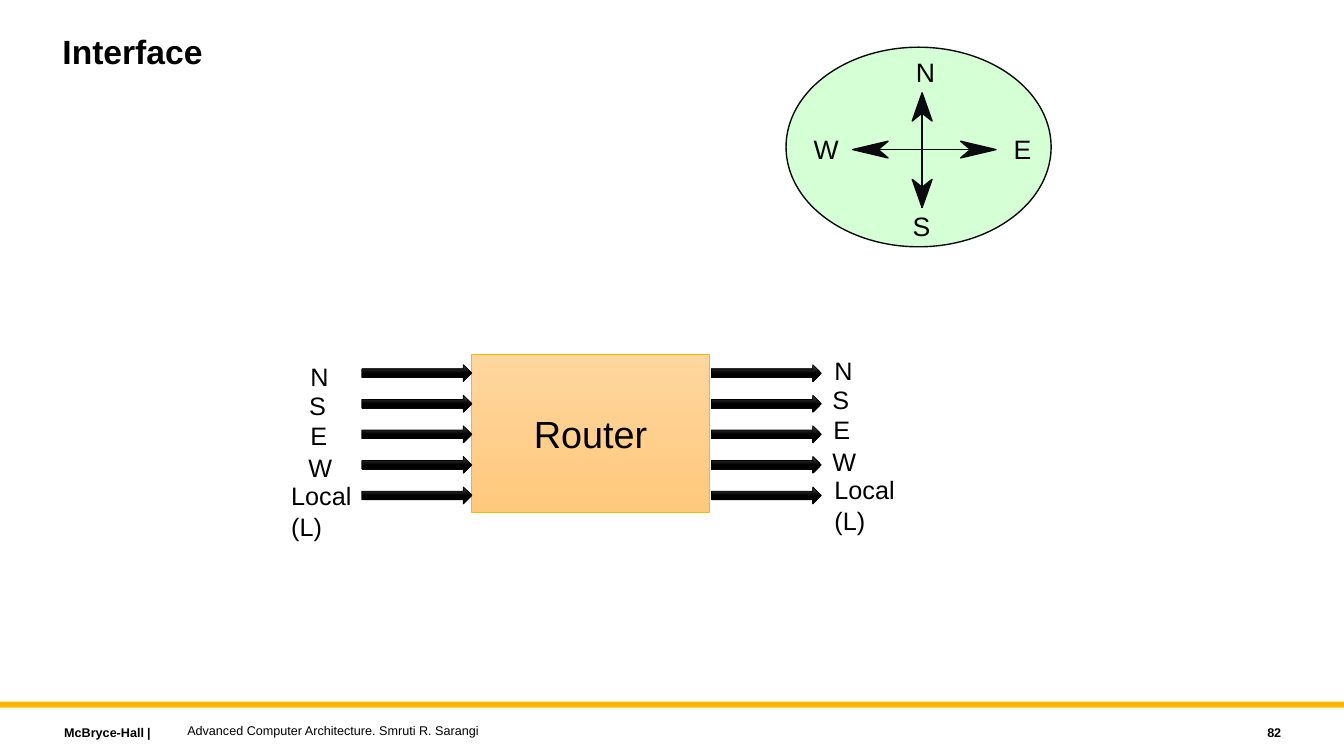
from dataclasses import dataclass

from lxml import etree
from pptx import Presentation
from pptx.dml.color import RGBColor
from pptx.enum.shapes import MSO_CONNECTOR, MSO_SHAPE
from pptx.enum.text import MSO_ANCHOR, MSO_AUTO_SIZE, PP_ALIGN
from pptx.oxml.ns import qn
from pptx.util import Cm, Pt

LEFT, CENTER, RIGHT = PP_ALIGN.LEFT, PP_ALIGN.CENTER, PP_ALIGN.RIGHT
TOP, MIDDLE = MSO_ANCHOR.TOP, MSO_ANCHOR.MIDDLE
RECTANGLE, OVAL, ARROW = MSO_SHAPE.RECTANGLE, MSO_SHAPE.OVAL, MSO_SHAPE.RIGHT_ARROW
STRAIGHT = MSO_CONNECTOR.STRAIGHT


@dataclass(frozen=True)
class Theme:
    font: str = "Arial"
    black: RGBColor = RGBColor(0, 0, 0)
    ink: RGBColor = RGBColor(0x0A, 0x0A, 0x0F)
    gold: RGBColor = RGBColor(0xFF, 0xB6, 0x00)
    mint: RGBColor = RGBColor(0xD5, 0xFF, 0xD5)
    peach: RGBColor = RGBColor(0xFF, 0xD6, 0x9E)
    apricot: RGBColor = RGBColor(0xFF, 0xC9, 0x7C)
    grey: RGBColor = RGBColor(0x4B, 0x4B, 0x4B)
    title: int = 24
    router: int = 27
    compass: int = 19
    port: int = 18
    footer: int = 9


THEME = Theme()


def write(frame, lines, size, bold=False, align=LEFT, anchor=TOP, wrap=True):
    frame.word_wrap = wrap
    frame.auto_size = MSO_AUTO_SIZE.NONE if wrap else MSO_AUTO_SIZE.SHAPE_TO_FIT_TEXT
    frame.vertical_anchor = anchor
    for index, line in enumerate(lines):
        paragraph = frame.paragraphs[0] if index == 0 else frame.add_paragraph()
        paragraph.alignment = align
        run = paragraph.add_run()
        run.text = line
        run.font.name = THEME.font
        run.font.size = Pt(size)
        run.font.bold = bold
        run.font.color.rgb = THEME.black


def paint(shape, colors, line=None, width=1, last_stop=1.0):
    shape.shadow.inherit = False
    if len(colors) == 1:
        shape.fill.solid()
        shape.fill.fore_color.rgb = colors[0]
    else:
        shape.fill.gradient()
        shape.fill.gradient_angle = 270
        for stop, color in zip(shape.fill.gradient_stops, colors):
            stop.color.rgb = color
        shape.fill.gradient_stops[1].position = last_stop
    if line is None:
        shape.line.fill.background()
    else:
        shape.line.color.rgb = line
        shape.line.width = Pt(width)


deck = Presentation()
deck.slide_width, deck.slide_height = Cm(33.87), Cm(19.05)
slide = deck.slides.add_slide(deck.slide_layouts[5])
shapes = slide.shapes

# Footer
footer_bar = shapes.add_shape(RECTANGLE, Cm(0), Cm(17.68), Cm(33.87), Cm(0.15))
paint(footer_bar, [THEME.gold])
publisher = shapes.add_textbox(Cm(1.37), Cm(18.14), Cm(5.77), Cm(0.64)).text_frame
tabs = etree.SubElement(publisher.paragraphs[0]._p.get_or_add_pPr(), qn("a:tabLst"))
etree.SubElement(tabs, qn("a:tab"), pos=str(Cm(2.09)), algn="l")
write(publisher, ["McBryce-Hall\t|"], THEME.footer, bold=True)
book = shapes.add_textbox(Cm(4.47), Cm(18.08), Cm(20.32), Cm(0.64)).text_frame
write(book, ["Advanced Computer Architecture. Smruti R. Sarangi"], THEME.footer, anchor=MIDDLE)
page = shapes.add_textbox(Cm(28.98), Cm(18.14), Cm(3.56), Cm(0.64)).text_frame
write(page, ["82"], THEME.footer, bold=True, align=RIGHT, anchor=MIDDLE)

# Title
title = shapes.title
title.left, title.top, title.width, title.height = Cm(1.32), Cm(0.76), Cm(25.4), Cm(2.29)
write(title.text_frame, ["Interface"], THEME.title, bold=True)
title.text_frame.paragraphs[0].line_spacing = 0.9

# Compass: dial, axes, then a head and a letter for each direction
dial = shapes.add_shape(OVAL, Cm(19.81), Cm(1.19), Cm(6.68), Cm(5.03))
paint(dial, [THEME.mint], THEME.ink)
north, south = (23.24, 2.34), (23.24, 5.23)
west, east = (21.49, 3.77), (25.1, 3.77)
for start, end in [(north, south), (east, west)]:
    axis = shapes.add_connector(STRAIGHT, *(Cm(value) for value in start + end))
    axis.line.color.rgb = THEME.ink
    axis.line.width = Pt(1)
    etree.SubElement(axis._element.spPr, qn("a:effectLst"))

vertical_head, horizontal_head = (0.71, 0.25, 0.51), (0.89, 0.21, 0.64)
directions = [
    ("N", north, (0, -1), vertical_head, (23.32, 1.8)),
    ("S", south, (0, 1), vertical_head, (23.22, 5.68)),
    ("E", east, (1, 0), horizontal_head, (25.77, 3.75)),
    ("W", west, (-1, 0), horizontal_head, (20.82, 3.75)),
]
for letter, (tip_x, tip_y), (dx, dy), (length, half, notch), (mid_x, mid_y) in directions:
    outline = [
        (Cm(tip_x - dx * back - dy * side), Cm(tip_y - dy * back + dx * side))
        for back, side in [(0, 0), (length, half), (notch, 0), (length, -half)]
    ]
    builder = shapes.build_freeform(*outline[0])
    builder.add_line_segments(outline[1:], close=True)
    paint(builder.convert_to_shape(), [THEME.ink], THEME.ink)
    label = shapes.add_textbox(Cm(mid_x - 0.75), Cm(mid_y - 0.5), Cm(1.5), Cm(1))
    write(label.text_frame, [letter], THEME.compass, align=CENTER, anchor=MIDDLE)

# Router
router = shapes.add_shape(RECTANGLE, Cm(11.89), Cm(8.92), Cm(5.99), Cm(3.99))
paint(router, [THEME.peach, THEME.apricot], THEME.gold, 0.5)
write(router.text_frame, ["Router"], THEME.router, align=CENTER, anchor=MIDDLE)

# Ports: the same five on the input and the output side
ports = [
    (["N"], 7.57, 20.78, 8.97, 0.97),
    (["S"], 7.54, 20.73, 9.7, 0.94),
    (["E"], 7.57, 20.75, 10.46, 0.94),
    (["W"], 7.52, 20.73, 11.28, 1.12),
    (["Local", "(L)"], 7.09, 20.78, 11.99, 2.06),
]
for row, (lines, input_x, output_x, label_y, width) in enumerate(ports):
    for arrow_x, label_x, lift in [(9.12, input_x, 0), (17.93, output_x, 0.15)]:
        arrow = shapes.add_shape(ARROW, Cm(arrow_x), Cm(9.19 + 0.77 * row), Cm(2.77), Cm(0.43))
        paint(arrow, [THEME.grey, THEME.black], THEME.black, 0.5, last_stop=0.5)
        height = 1.02 if len(lines) == 1 else 1.8
        port = shapes.add_textbox(Cm(label_x), Cm(label_y - lift), Cm(width), Cm(height))
        write(port.text_frame, lines, THEME.port, wrap=False)

deck.save("out.pptx")
